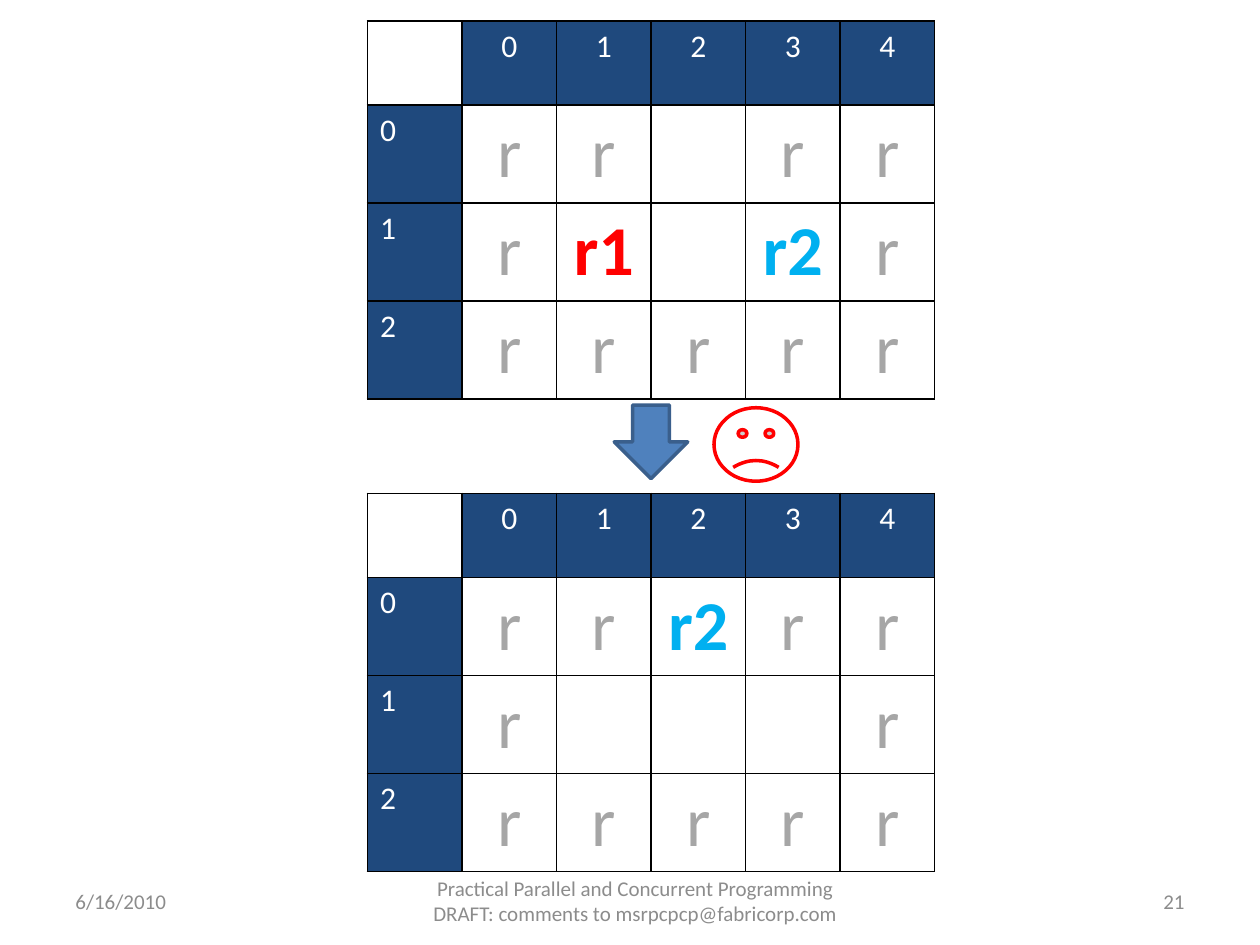
from dataclasses import dataclass

from lxml.etree import SubElement
from pptx import Presentation
from pptx.dml.color import RGBColor as Color
from pptx.enum.shapes import MSO_SHAPE as ShapeKind
from pptx.enum.text import MSO_ANCHOR as Anchor, PP_ALIGN as Align
from pptx.oxml.ns import qn
from pptx.util import Pt


@dataclass(frozen=True)
class Theme:
    font: str = "Calibri"
    footer_size: float = 12
    label_size: float = 18
    mark_size: float = 40
    white: str = "FFFFFF"
    black: str = "000000"
    header: str = "1F497D"
    muted: str = "A6A6A6"
    footer: str = "8C8C8C"
    red: str = "FF0000"
    cyan: str = "00B0F0"
    arrow: str = "4F81BD"
    arrow_line: str = "3A5F8C"


@dataclass(frozen=True)
class Grid:
    top: float
    rows: tuple[tuple[str, ...], ...]


@dataclass(frozen=True)
class Footer:
    left: float
    width: float
    text: str
    align: Align


@dataclass(frozen=True)
class Symbol:
    kind: ShapeKind
    left: float
    top: float
    width: float
    height: float
    fill: str
    line: str
    adjustments: tuple[float, ...] = ()


THEME = Theme()
GRID_LEFT, COLUMN_WIDTH, HEADER_HEIGHT, ROW_HEIGHT = 210, 54, 48, 56
FOOTER_TOP, FOOTER_HEIGHT = 500.5, 28.75
MARK_COLORS = {"r": THEME.muted, "r1": THEME.red, "r2": THEME.cyan}

GRIDS = (
    Grid(12, (
        ("r", "r", "", "r", "r"),
        ("r", "r1", "", "r2", "r"),
        ("r", "r", "r", "r", "r"),
    )),
    Grid(282, (
        ("r", "r", "r2", "r", "r"),
        ("r", "", "", "", "r"),
        ("r", "r", "r", "r", "r"),
    )),
)
FOOTERS = (
    Footer(36, 168, "6/16/2010", Align.LEFT),
    Footer(228, 270, "Practical Parallel and Concurrent Programming "
           "DRAFT: comments to msrpcpcp@fabricorp.com", Align.CENTER),
    Footer(516, 168, "21", Align.RIGHT),
)
SYMBOLS = (
    Symbol(ShapeKind.DOWN_ARROW, 351, 231.5, 42, 42, THEME.arrow, THEME.arrow_line),
    Symbol(ShapeKind.SMILEY_FACE, 408, 233, 48, 42, THEME.white, THEME.red, (-0.047,)),
)


def write(frame, text: str, *, size: float, color: str,
          align: Align = Align.LEFT, bold: bool = False) -> None:
    paragraph = frame.paragraphs[0]
    paragraph.alignment = align
    run = paragraph.add_run()
    run.text = text
    run.font.name = THEME.font
    run.font.size = Pt(size)
    run.font.bold = bold
    run.font.color.rgb = Color.from_string(color)


def paint_cell(cell, fill: str) -> None:
    properties = cell._tc.get_or_add_tcPr()
    for side in ("lnL", "lnR", "lnT", "lnB"):
        line = SubElement(properties, qn(f"a:{side}"), w=str(Pt(1)))
        solid = SubElement(line, qn("a:solidFill"))
        SubElement(solid, qn("a:srgbClr"), val=THEME.black)
    cell.fill.solid()
    cell.fill.fore_color.rgb = Color.from_string(fill)


def draw_grid(slide, grid: Grid) -> None:
    row_count, column_count = len(grid.rows) + 1, len(grid.rows[0]) + 1
    table = slide.shapes.add_table(
        row_count, column_count, Pt(GRID_LEFT), Pt(grid.top),
        Pt(COLUMN_WIDTH * column_count),
        Pt(HEADER_HEIGHT + ROW_HEIGHT * len(grid.rows))).table
    table.first_row = table.horz_banding = False
    for column in table.columns:
        column.width = Pt(COLUMN_WIDTH)
    for index, row in enumerate(table.rows):
        row.height = Pt(ROW_HEIGHT if index else HEADER_HEIGHT)

    for row in range(row_count):
        for column in range(column_count):
            cell = table.cell(row, column)
            is_header = (row == 0) != (column == 0)
            paint_cell(cell, THEME.header if is_header else THEME.white)
            if is_header:
                write(cell.text_frame, str(row + column - 1),
                      size=THEME.label_size, color=THEME.white,
                      align=Align.LEFT if row else Align.CENTER)
            elif row and (mark := grid.rows[row - 1][column - 1]):
                write(cell.text_frame, mark, size=THEME.mark_size,
                      color=MARK_COLORS[mark], align=Align.CENTER, bold=mark != "r")


def draw_footer(slide, footer: Footer) -> None:
    box = slide.shapes.add_textbox(Pt(footer.left), Pt(FOOTER_TOP),
                                   Pt(footer.width), Pt(FOOTER_HEIGHT))
    frame = box.text_frame
    frame.word_wrap = True
    frame.vertical_anchor = Anchor.MIDDLE
    write(frame, footer.text, size=THEME.footer_size,
          color=THEME.footer, align=footer.align)


def draw_symbol(slide, symbol: Symbol) -> None:
    shape = slide.shapes.add_shape(symbol.kind, Pt(symbol.left), Pt(symbol.top),
                                   Pt(symbol.width), Pt(symbol.height))
    shape.shadow.inherit = False
    shape.fill.solid()
    shape.fill.fore_color.rgb = Color.from_string(symbol.fill)
    shape.line.color.rgb = Color.from_string(symbol.line)
    shape.line.width = Pt(2)
    for index, value in enumerate(symbol.adjustments):
        shape.adjustments[index] = value


def main() -> None:
    presentation = Presentation()
    presentation.slide_width, presentation.slide_height = Pt(720), Pt(540)
    slide = presentation.slides.add_slide(presentation.slide_layouts[6])

    # Date, title and page number
    for footer in FOOTERS:
        draw_footer(slide, footer)

    # Room grids before and after the move
    for grid in GRIDS:
        draw_grid(slide, grid)

    # Arrow and sad face between the grids
    for symbol in SYMBOLS:
        draw_symbol(slide, symbol)

    presentation.save("out.pptx")


if __name__ == "__main__":
    main()
